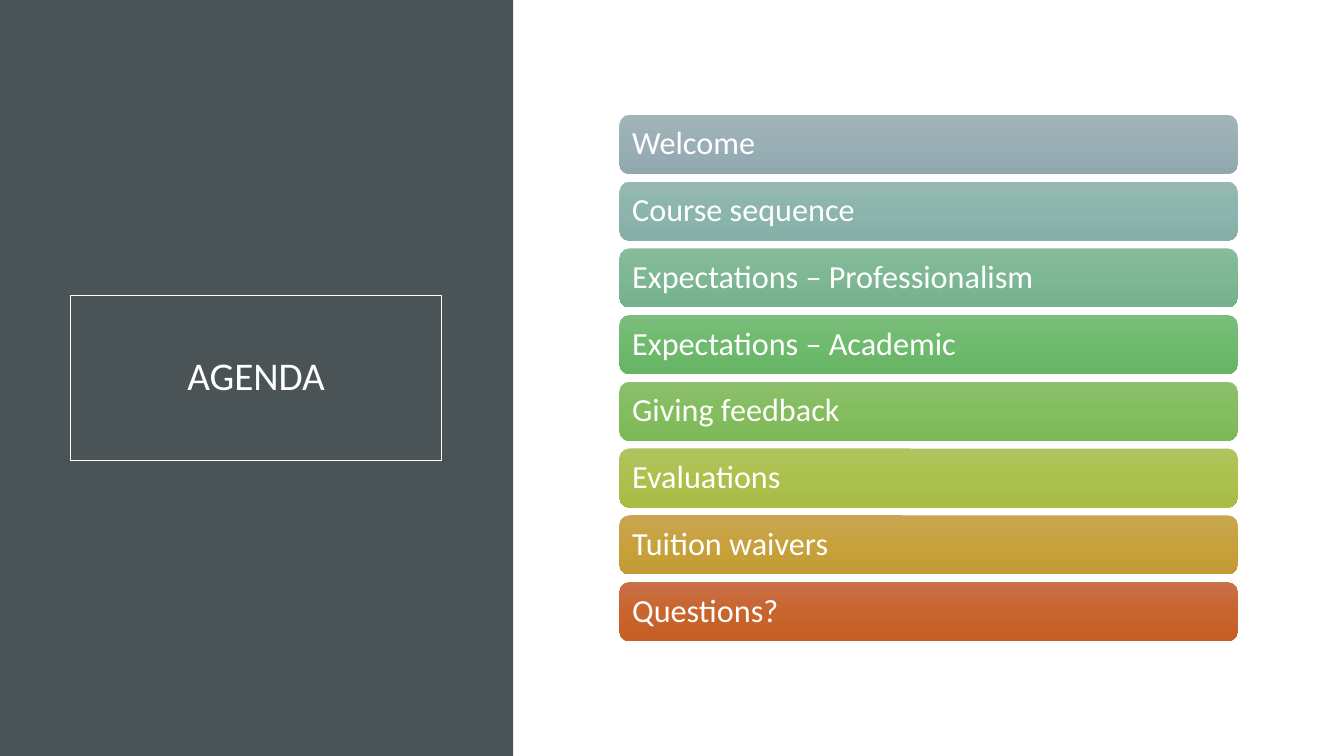
from copy import deepcopy

from pptx import Presentation
from pptx.dml.color import RGBColor
from pptx.enum.shapes import MSO_SHAPE as Shape
from pptx.enum.text import MSO_ANCHOR as Anchor, MSO_AUTO_SIZE as AutoSize, PP_ALIGN as Align
from pptx.oxml.ns import qn
from pptx.util import Pt

WHITE = "FFFFFF"
SLATE = "4A5356"
AGENDA = [
    ("Welcome", ("A2B4B9", "99AFB5", "91A7AE")),
    ("Course sequence", ("95B9B1", "8CB5AD", "84AEA6")),
    ("Expectations – Professionalism", ("88BC9B", "7DB793", "75B18C")),
    ("Expectations – Academic", ("7CBD7C", "6EBA6E", "66B466")),
    ("Giving feedback", ("8DBF6E", "83BD5E", "7CB856")),
    ("Evaluations", ("B0C35F", "ACC14D", "A7BD45")),
    ("Tuition waivers", ("C8A752", "C8A13C", "C39B34")),
    ("Questions?", ("C97149", "C9642D", "C55D26")),
]


def color(hex_value):
    return RGBColor.from_string(hex_value)


def set_all(target, values):
    for name, value in values.items():
        setattr(target, name, value)


def place(shape, box):
    set_all(shape, dict(zip(("left", "top", "width", "height"), map(Pt, box))))


def write(shape, text, size, align, inset):
    frame = shape.text_frame
    frame.text = text
    set_all(frame, {"word_wrap": True, "auto_size": AutoSize.NONE,
                    "vertical_anchor": Anchor.MIDDLE})
    set_all(frame, {f"margin_{side}": Pt(inset)
                    for side in ("left", "top", "right", "bottom")})
    para = frame.paragraphs[0]
    set_all(para, {"alignment": align, "line_spacing": 0.9})
    set_all(para.font, {"name": "Calibri", "size": Pt(size), "bold": False})
    para.font.color.rgb = color(WHITE)


def add_plain_shape(slide, kind, box):
    shape = slide.shapes.add_shape(kind, *map(Pt, box))
    shape.shadow.inherit = False
    shape.line.fill.background()
    return shape


def fill_downward(shape, hex_values):
    """Fill with a three-stop gradient running from top to bottom."""
    shape.fill.gradient()
    shape.fill.gradient_angle = 270
    stop_list = shape._element.spPr.find(qn("a:gradFill")).find(qn("a:gsLst"))
    stop_list.append(deepcopy(stop_list[-1]))
    for stop, position, value in zip(shape.fill.gradient_stops, (0, 0.5, 1), hex_values):
        stop.position = position
        stop.color.rgb = color(value)


def add_title_panel(slide, box):
    left, top, width, height = box
    panel = add_plain_shape(slide, Shape.RECTANGLE, box)
    panel.fill.solid()
    panel.fill.fore_color.rgb = color(SLATE)
    # The panel goes behind the title placeholder.
    slide.shapes._spTree.insert(2, panel._element)

    title = slide.shapes.title
    title_height = 118
    place(title, (left + 50.4, top + (height - title_height) / 2, 265, title_height))
    title.line.color.rgb = color(WHITE)
    title.line.width = Pt(0.75)
    write(title, "AGENDA", 28, Align.CENTER, 14.4)


def add_agenda_bars(slide, box, gap=5.4):
    left, top, width, height = box
    bar_height = (height - gap * (len(AGENDA) - 1)) / len(AGENDA)
    for index, (text, hex_values) in enumerate(AGENDA):
        bar_top = top + index * (bar_height + gap)
        bar = add_plain_shape(slide, Shape.ROUNDED_RECTANGLE,
                              (left, bar_top, width, bar_height))
        bar.adjustments[0] = 0.167
        fill_downward(bar, hex_values)
        write(bar, text, 23, Align.LEFT, 7)


def main():
    deck = Presentation()
    set_all(deck, {"slide_width": Pt(960), "slide_height": Pt(540)})
    slide = deck.slides.add_slide(deck.slide_layouts[5])
    add_title_panel(slide, (0, 0, 366.5, 540))
    add_agenda_bars(slide, (442.5, 82, 441.5, 376))
    deck.save("out.pptx")


if __name__ == "__main__":
    main()
